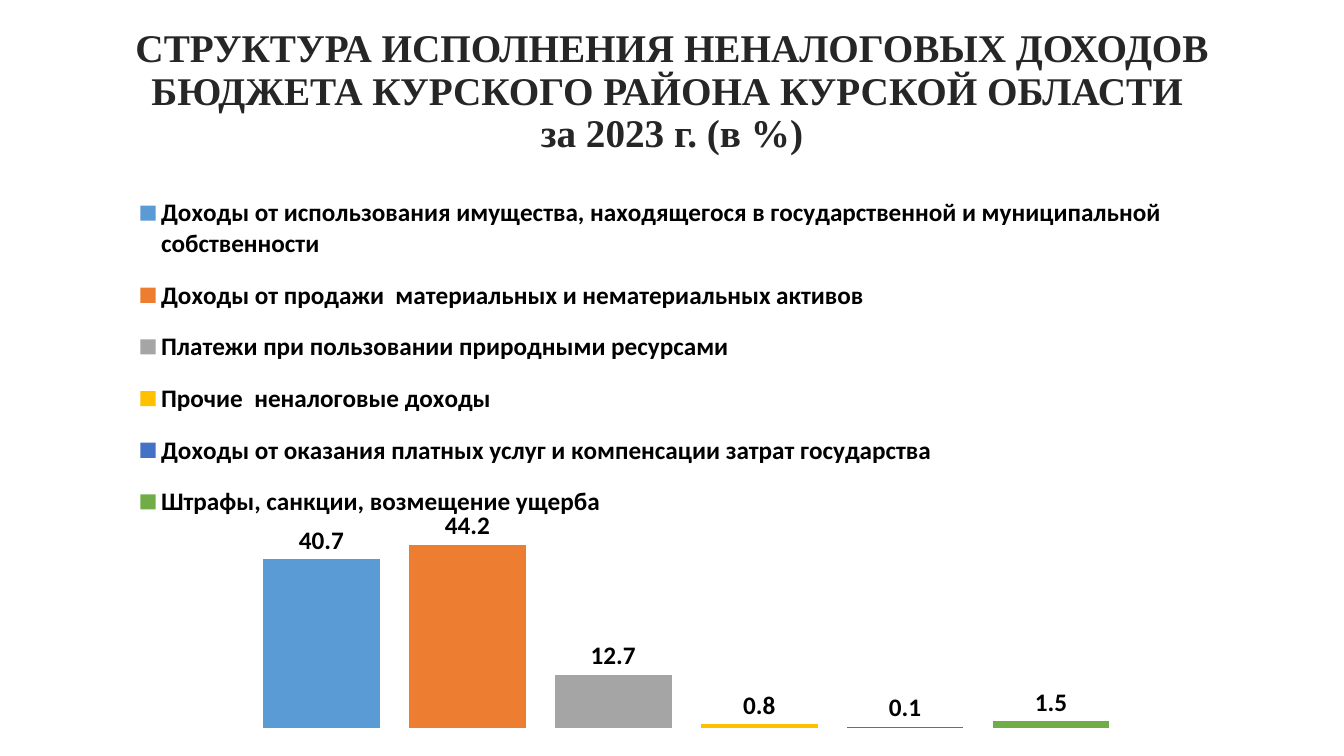
from lxml import etree
from pptx import Presentation
from pptx.chart.data import CategoryChartData
from pptx.dml.color import RGBColor
from pptx.enum.chart import XL_CHART_TYPE as ChartType
from pptx.enum.chart import XL_LABEL_POSITION as LabelPosition
from pptx.enum.chart import XL_LEGEND_POSITION as LegendPosition
from pptx.enum.text import MSO_ANCHOR as Anchor
from pptx.enum.text import PP_ALIGN as Align
from pptx.oxml.ns import qn
from pptx.util import Pt

TITLE_LINES = [
    "СТРУКТУРА ИСПОЛНЕНИЯ НЕНАЛОГОВЫХ ДОХОДОВ БЮДЖЕТА КУРСКОГО РАЙОНА КУРСКОЙ ОБЛАСТИ ",
    "за 2023 г. (в %)",
]
INCOME = [
    ("Доходы от использования имущества, находящегося в государственной "
     "и муниципальной собственности", 40.7, "5B9BD5"),
    ("Доходы от продажи  материальных и нематериальных активов", 44.2, "ED7D31"),
    ("Платежи при пользовании природными ресурсами", 12.7, "A5A5A5"),
    ("Прочие  неналоговые доходы", 0.8, "FFC000"),
    ("Доходы от оказания платных услуг и компенсации затрат государства", 0.1, "4472C4"),
    ("Штрафы, санкции, возмещение ущерба", 1.5, "70AD47"),
]


def color(hex_code):
    return RGBColor.from_string(hex_code)


def place_title(slide, left, top, width, height):
    title = slide.shapes.title
    title.left, title.top, title.width, title.height = map(Pt, (left, top, width, height))
    frame = title.text_frame
    frame.word_wrap = True
    frame.vertical_anchor = Anchor.MIDDLE
    paragraph = frame.paragraphs[0]
    paragraph.alignment = Align.CENTER
    paragraph.line_spacing = 0.9
    for index, line in enumerate(TITLE_LINES):
        if index:
            paragraph.add_line_break()
        run = paragraph.add_run()
        run.text = line
        run.font.name = "Times New Roman"
        run.font.size = Pt(28)
        run.font.bold = True
        run.font.color.rgb = color("262626")


def set_layout(element, following, x, y, w, h, inner=False):
    """Fix the place of a chart part, in fractions of the chart, before the child `following`."""
    for old in element.findall(qn("c:layout")):
        element.remove(old)
    layout = etree.Element(qn("c:layout"))
    manual = etree.SubElement(layout, qn("c:manualLayout"))
    settings = [("layoutTarget", "inner")] if inner else []
    settings += [("xMode", "edge"), ("yMode", "edge"), ("x", x), ("y", y), ("w", w), ("h", h)]
    for name, value in settings:
        etree.SubElement(manual, qn(f"c:{name}")).set("val", str(value))
    element.find(qn(following)).addprevious(layout)


def add_income_chart(slide, left, top, width, height):
    data = CategoryChartData(number_format="0.0")
    data.categories = ["1"]
    for name, value, _ in INCOME:
        data.add_series(name, [value])
    chart = slide.shapes.add_chart(
        ChartType.COLUMN_CLUSTERED, *map(Pt, (left, top, width, height)), data).chart
    chart.has_title = False
    chart.font.name = "Calibri"
    chart.font.size = Pt(18)
    chart.font.bold = True
    chart.font.color.rgb = color("000000")

    chart.value_axis.minimum_scale = 0
    chart.value_axis.maximum_scale = 50
    chart.value_axis.has_major_gridlines = False
    chart.value_axis.visible = False
    chart.category_axis.visible = False

    plot = chart.plots[0]
    plot.vary_by_categories = False
    plot.gap_width = 252
    plot.overlap = -25
    for series, (_, _, fill) in zip(plot.series, INCOME):
        series.format.fill.solid()
        series.format.fill.fore_color.rgb = color(fill)
        labels = series.data_labels
        labels.show_value = True
        labels.position = LabelPosition.OUTSIDE_END
    set_layout(chart._chartSpace.chart.plotArea, "c:barChart",
               0.02, 0.62, 0.97, 0.36, inner=True)

    chart.has_legend = True
    chart.legend.position = LegendPosition.TOP
    chart.legend.include_in_layout = False
    set_layout(chart.legend._element, "c:overlay", 0.01, 0.02, 0.93, 0.63)


def build_income_slide(presentation):
    slide = presentation.slides.add_slide(presentation.slide_layouts[5])
    place_title(slide, 66, 14, 828, 104)
    add_income_chart(slide, 66, 118, 840, 410)


def main():
    presentation = Presentation()
    presentation.slide_width = Pt(960)
    presentation.slide_height = Pt(540)
    build_income_slide(presentation)
    presentation.save("out.pptx")


if __name__ == "__main__":
    main()
